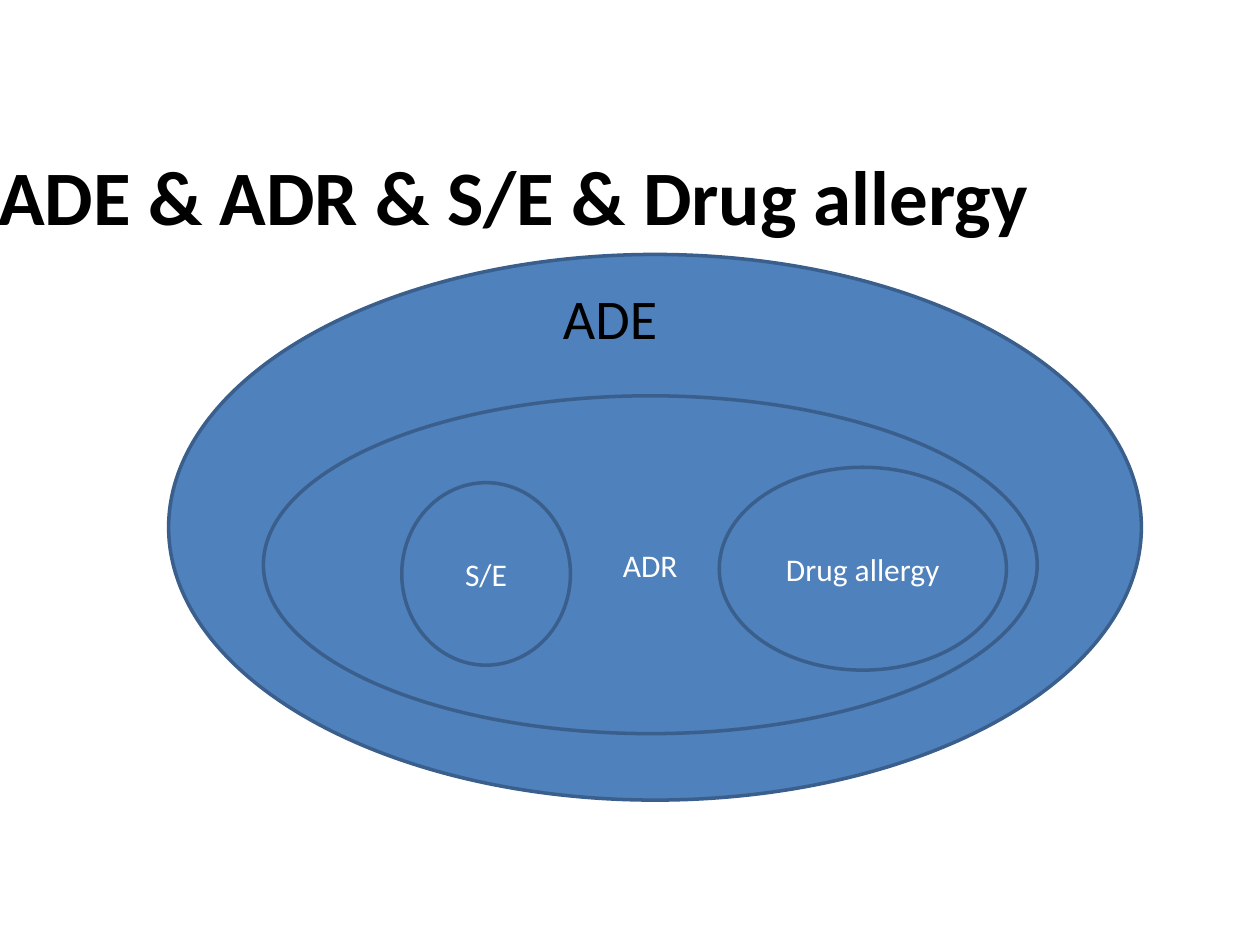
from dataclasses import dataclass

from pptx import Presentation
from pptx.dml.color import RGBColor as Rgb
from pptx.enum.shapes import MSO_SHAPE as Kind
from pptx.enum.text import MSO_ANCHOR as Anchor, PP_ALIGN as Align
from pptx.slide import Slide
from pptx.text.text import TextFrame as Frame
from pptx.util import Cm, Pt


@dataclass(frozen=True)
class Theme:
    font: str = "Calibri"
    fill: Rgb = Rgb(0x4F, 0x81, 0xBD)
    edge: Rgb = Rgb(0x3A, 0x5F, 0x8C)
    dark: Rgb = Rgb(0, 0, 0)
    light: Rgb = Rgb(255, 255, 255)
    line: float = 2
    title: int = 44
    large: int = 32
    small: int = 18


@dataclass(frozen=True)
class Box:
    left: float
    top: float
    width: float
    height: float

    def place(self) -> tuple[Cm, Cm, Cm, Cm]:
        return Cm(self.left), Cm(self.top), Cm(self.width), Cm(self.height)


@dataclass(frozen=True)
class Oval:
    kind: Kind
    box: Box
    text: str = ""


@dataclass(frozen=True)
class Label:
    box: Box
    text: str
    size: int
    bold: bool = False


THEME = Theme()

OVALS = [
    Oval(Kind.OVAL, Box(3.4, 5.13, 19.61, 11)),
    Oval(Kind.OVAL, Box(5.31, 7.98, 15.6, 6.81), "ADR"),
    Oval(Kind.FLOWCHART_CONNECTOR, Box(8.1, 9.73, 3.4, 3.68), "S/E"),
    Oval(Kind.FLOWCHART_CONNECTOR, Box(14.5, 9.42, 5.79, 4.09), "Drug allergy"),
]

LABELS = [
    Label(Box(-1.07, 2.34, 22.86, 3.18), "ADE & ADR & S/E & Drug allergy",
          THEME.title, True),
    Label(Box(10.3, 5.65, 4, 1.5), "ADE", THEME.large),
]


def write(frame: Frame, text: str, size: int, color: Rgb, bold: bool = False) -> None:
    frame.word_wrap = True
    frame.vertical_anchor = Anchor.MIDDLE
    para = frame.paragraphs[0]
    para.alignment = Align.CENTER
    run = para.add_run()
    run.text = text
    font = run.font
    font.name, font.size, font.bold = THEME.font, Pt(size), bold
    font.color.rgb = color


def draw_oval(slide: Slide, oval: Oval) -> None:
    shape = slide.shapes.add_shape(oval.kind, *oval.box.place())
    shape.shadow.inherit = False
    shape.fill.solid()
    shape.fill.fore_color.rgb = THEME.fill
    shape.line.color.rgb = THEME.edge
    shape.line.width = Pt(THEME.line)
    if oval.text:
        write(shape.text_frame, oval.text, THEME.small, THEME.light)


def draw_label(slide: Slide, label: Label) -> None:
    shape = slide.shapes.add_textbox(*label.box.place())
    write(shape.text_frame, label.text, label.size, THEME.dark, label.bold)


def main() -> None:
    deck = Presentation()
    deck.slide_width, deck.slide_height = Cm(25.4), Cm(19.05)
    slide = deck.slides.add_slide(deck.slide_layouts[6])
    for oval in OVALS:
        draw_oval(slide, oval)
    for label in LABELS:
        draw_label(slide, label)
    deck.save("out.pptx")


if __name__ == "__main__":
    main()
